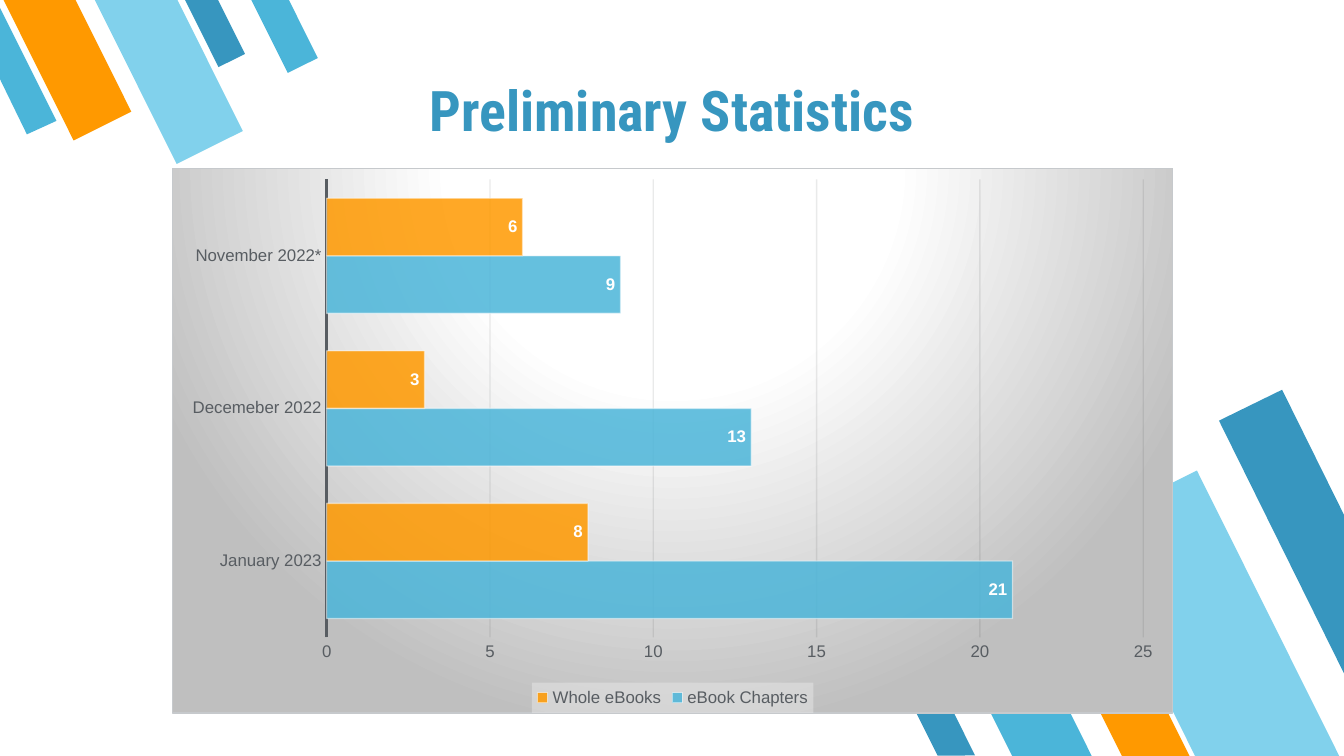
from dataclasses import dataclass

from lxml import etree
from pptx import Presentation
from pptx.chart.axis import CategoryAxis, ValueAxis
from pptx.chart.chart import Chart
from pptx.chart.data import CategoryChartData
from pptx.chart.series import BarSeries
from pptx.dml.color import RGBColor
from pptx.enum.chart import XL_CHART_TYPE, XL_LABEL_POSITION, XL_LEGEND_POSITION, XL_TICK_MARK
from pptx.enum.shapes import MSO_SHAPE
from pptx.enum.text import MSO_ANCHOR, PP_ALIGN
from pptx.oxml import parse_xml
from pptx.oxml.ns import nsdecls, qn
from pptx.shapes.autoshape import Shape
from pptx.slide import Slide
from pptx.text.text import Font
from pptx.util import Inches, Pt

BAR_CLUSTERED = XL_CHART_TYPE.BAR_CLUSTERED
INSIDE_END = XL_LABEL_POSITION.INSIDE_END
LEGEND_BOTTOM = XL_LEGEND_POSITION.BOTTOM
NO_TICKS = XL_TICK_MARK.NONE
SLANTED_STRIPE = MSO_SHAPE.FLOWCHART_MANUAL_INPUT
ANCHOR_BOTTOM = MSO_ANCHOR.BOTTOM
CENTER = PP_ALIGN.CENTER

SLIDE_WIDTH = Inches(10)
SLIDE_HEIGHT = SLIDE_WIDTH * 9 // 16
GRID_UNIT = SLIDE_WIDTH / 100


@dataclass(frozen=True)
class Theme:
    deep_blue: str = "3796BF"
    blue: str = "4BB5D9"
    pale_blue: str = "81D1EC"
    orange: str = "FF9900"
    white: str = "FFFFFF"
    chart_text: str = "252729"
    axis: str = "585D62"
    gridline: str = "2F3234"
    border: str = "C6C9CC"
    shade: str = "BFBFBF"
    legend: str = "F2F2F2"
    title_font: str = "Roboto Condensed"
    chart_font: str = "Arial"
    title_size: int = 30
    chart_size: int = 10
    label_size: int = 9
    thin_line: float = 0.75
    axis_line: float = 1.5


@dataclass(frozen=True)
class Box:
    column: float
    row: float
    columns: float
    rows: float

    def emu(self) -> tuple[int, ...]:
        return tuple(grid(value) for value in (self.column, self.row, self.columns, self.rows))


@dataclass(frozen=True)
class Stripe:
    box: Box
    rotation: float
    color: str


@dataclass(frozen=True)
class CutStripe:
    corners: tuple[tuple[float, float], ...]
    color: str


@dataclass(frozen=True)
class BarGroup:
    name: str
    values: tuple[int, ...]
    color: str


THEME = Theme()
LOWER_ANGLE = 153.5
UPPER_ANGLE = 333.5
STRIPES = (
    Stripe(Box(73.3, 45, 5.3, 13.2), LOWER_ANGLE, THEME.blue),
    Stripe(Box(85.3, 35.9, 9.6, 23.9), LOWER_ANGLE, THEME.pale_blue),
    Stripe(Box(81.8, 46.8, 4.5, 11.1), LOWER_ANGLE, THEME.orange),
    Stripe(Box(68.8, 50.9, 2.5, 6.2), LOWER_ANGLE, THEME.deep_blue),
    Stripe(Box(14.9, -0.8, 2.2, 5.6), UPPER_ANGLE, THEME.deep_blue),
    Stripe(Box(2.6, -1.8, 4.8, 11.8), UPPER_ANGLE, THEME.orange),
    Stripe(Box(9.8, -2, 5.5, 13.7), UPPER_ANGLE, THEME.pale_blue),
    Stripe(Box(19.9, -1, 2.5, 6.2), UPPER_ANGLE, THEME.blue),
)
CUT_STRIPES = (
    CutStripe(((95.4, 29), (90.7, 31.3), (100, 50.1), (100, 38.3)), THEME.deep_blue),
    CutStripe(((2, 10), (4.2, 9), (0, 0.6), (0, 5.9)), THEME.blue),
)
TITLE_BOX = Box(18.5, 4.2, 63, 7.4)
CHART_BOX = Box(12.8, 12.5, 74.5, 40.6)
MONTHS = ("January 2023", "Decemeber 2022", "November 2022*")
BAR_GROUPS = (
    BarGroup("eBook Chapters", (21, 13, 9), THEME.blue),
    BarGroup("Whole eBooks", (8, 3, 6), THEME.orange),
)


def grid(units: float) -> int:
    return round(units * GRID_UNIT)


def rgb(color: str) -> RGBColor:
    return RGBColor.from_string(color)


def style_font(font: Font, name: str, size: float, color: str, bold: bool = False) -> None:
    font.name = name
    font.size = Pt(size)
    font.bold = bold
    font.color.rgb = rgb(color)


def paint_stripe(shape: Shape, color: str) -> None:
    shape.shadow.inherit = False
    shape.fill.solid()
    shape.fill.fore_color.rgb = rgb(color)
    shape.line.fill.background()


def draw_stripe(slide: Slide, stripe: Stripe) -> None:
    shape = slide.shapes.add_shape(SLANTED_STRIPE, *stripe.box.emu())
    shape.rotation = stripe.rotation
    shape.element.xpath("./p:spPr/a:xfrm")[0].set("flipH", "1")
    paint_stripe(shape, stripe.color)


def draw_cut_stripe(slide: Slide, stripe: CutStripe) -> None:
    start, *others = [(grid(column), grid(row)) for column, row in stripe.corners]
    builder = slide.shapes.build_freeform(*start)
    builder.add_line_segments(others, close=True)
    paint_stripe(builder.convert_to_shape(), stripe.color)


def draw_title(slide: Slide, text: str) -> None:
    frame = slide.shapes.add_textbox(*TITLE_BOX.emu()).text_frame
    frame.word_wrap = True
    frame.vertical_anchor = ANCHOR_BOTTOM
    frame.margin_left = frame.margin_right = grid(1)
    frame.margin_top = frame.margin_bottom = grid(1)
    paragraph = frame.paragraphs[0]
    paragraph.text = text
    paragraph.alignment = CENTER
    style_font(paragraph.font, THEME.title_font, THEME.title_size, THEME.deep_blue, bold=True)


def set_opacity(chart: Chart, color_path: str, percent: int) -> None:
    for color in chart.element.xpath(color_path):
        etree.SubElement(color, qn("a:alpha")).set("val", str(percent * 1000))


def style_axis(axis: CategoryAxis | ValueAxis) -> None:
    axis.major_tick_mark = axis.minor_tick_mark = NO_TICKS
    style_font(axis.tick_labels.font, THEME.chart_font, THEME.label_size, THEME.axis)


def style_series(series: BarSeries, color: str) -> None:
    series.format.fill.solid()
    series.format.fill.fore_color.rgb = rgb(color)
    series.format.line.color.rgb = rgb(THEME.white)
    series.format.line.width = Pt(THEME.thin_line)
    labels = series.data_labels
    labels.show_value = True
    labels.position = INSIDE_END
    style_font(labels.font, THEME.chart_font, THEME.label_size, THEME.white, bold=True)


def add_backgrounds(chart: Chart) -> None:
    stops = "".join(
        f'<a:gs pos="{percent * 1000}"><a:srgbClr val="{color}"/></a:gs>'
        for percent, color in ((0, THEME.white), (39, THEME.white), (100, THEME.shade))
    )
    chart.element.find(qn("c:chart")).addnext(parse_xml(
        f'<c:spPr {nsdecls("c", "a")}><a:gradFill><a:gsLst>{stops}</a:gsLst>'
        '<a:path path="circle"><a:fillToRect l="50000" t="-80000" r="50000" b="180000"/></a:path>'
        f'</a:gradFill><a:ln w="{Pt(THEME.thin_line)}"><a:solidFill>'
        f'<a:srgbClr val="{THEME.border}"/></a:solidFill></a:ln></c:spPr>'
    ))
    chart.element.xpath(".//c:legend/c:overlay")[0].addnext(parse_xml(
        f'<c:spPr {nsdecls("c", "a")}><a:solidFill>'
        f'<a:srgbClr val="{THEME.legend}"/></a:solidFill></c:spPr>'
    ))


def draw_chart(slide: Slide) -> None:
    data = CategoryChartData()
    data.categories = MONTHS
    for group in BAR_GROUPS:
        data.add_series(group.name, group.values)
    chart = slide.shapes.add_chart(BAR_CLUSTERED, *CHART_BOX.emu(), data).chart
    style_font(chart.font, THEME.chart_font, THEME.chart_size, THEME.chart_text)
    chart.has_title = False
    chart.has_legend = True
    chart.legend.position = LEGEND_BOTTOM
    chart.legend.include_in_layout = False
    style_font(chart.legend.font, THEME.chart_font, THEME.label_size, THEME.axis)

    plot = chart.plots[0]
    plot.gap_width = 65
    plot.vary_by_categories = False
    for series, group in zip(plot.series, BAR_GROUPS):
        style_series(series, group.color)

    months, counts = chart.category_axis, chart.value_axis
    style_axis(months)
    months.format.line.color.rgb = rgb(THEME.axis)
    months.format.line.width = Pt(THEME.axis_line)
    style_axis(counts)
    counts.minimum_scale, counts.maximum_scale, counts.major_unit = 0, 25, 5
    counts.format.line.fill.background()
    counts.major_gridlines.format.line.color.rgb = rgb(THEME.gridline)
    counts.major_gridlines.format.line.width = Pt(THEME.thin_line)

    add_backgrounds(chart)
    set_opacity(chart, ".//c:ser/c:spPr/a:solidFill/a:srgbClr", 85)
    set_opacity(chart, ".//c:ser/c:spPr/a:ln//a:srgbClr", 50)
    set_opacity(chart, ".//c:majorGridlines//a:srgbClr", 10)
    set_opacity(chart, ".//c:legend/c:spPr//a:srgbClr", 39)


def main() -> None:
    presentation = Presentation()
    presentation.slide_width = SLIDE_WIDTH
    presentation.slide_height = SLIDE_HEIGHT
    slide = presentation.slides.add_slide(presentation.slide_layouts[6])
    for stripe in STRIPES:
        draw_stripe(slide, stripe)
    for cut_stripe in CUT_STRIPES:
        draw_cut_stripe(slide, cut_stripe)
    draw_title(slide, "Preliminary Statistics")
    draw_chart(slide)
    presentation.save("out.pptx")


if __name__ == "__main__":
    main()
